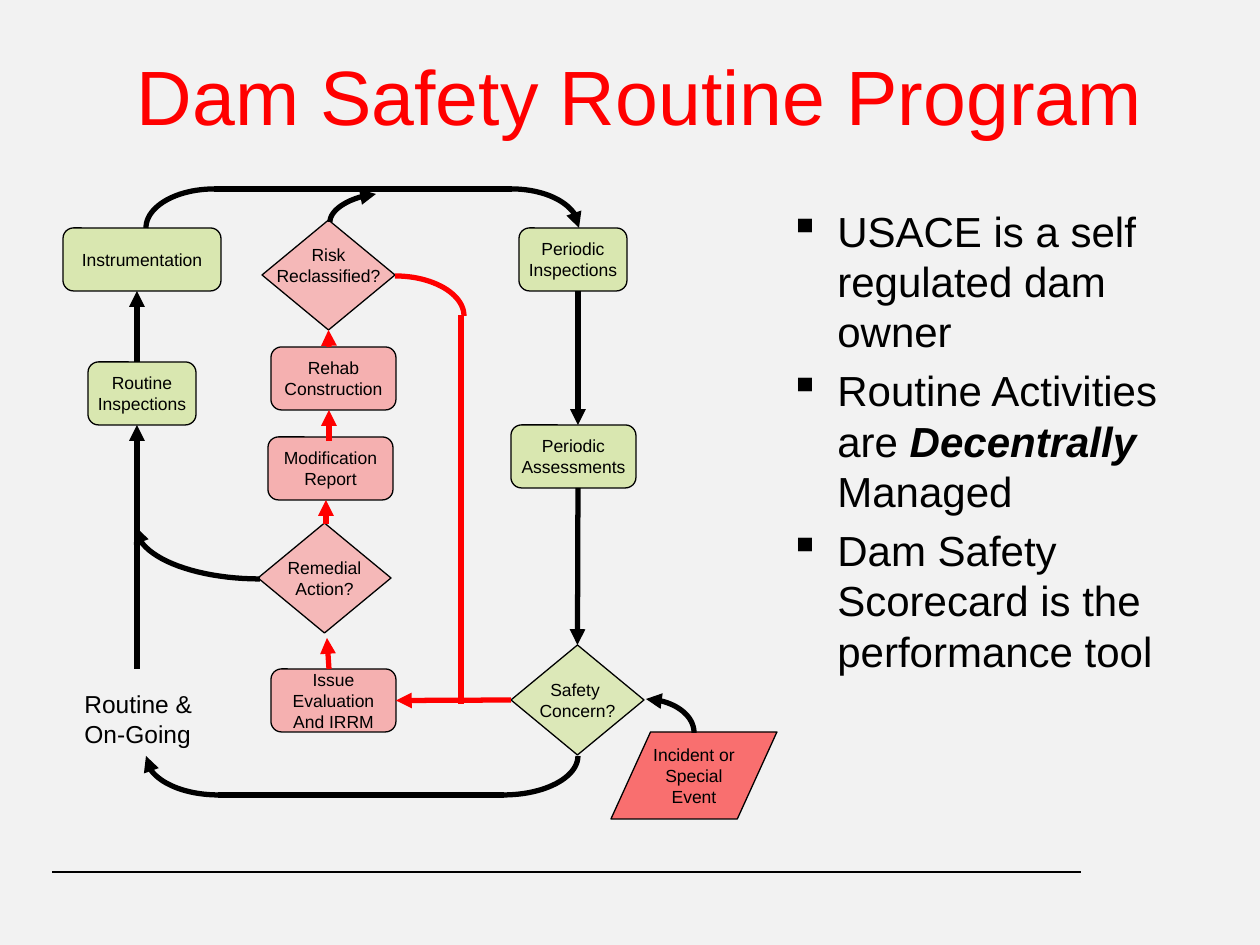
from lxml import etree
from pptx import Presentation
from pptx.dml.color import RGBColor
from pptx.enum.shapes import MSO_CONNECTOR, MSO_SHAPE as SHAPE
from pptx.enum.text import MSO_ANCHOR as ANCHOR, PP_ALIGN as ALIGN
from pptx.oxml.ns import qn
from pptx.util import Emu, Pt

FONT = "Arial"
BLACK, RED, GREEN = "000000", "FF0000", "99CC00"
TOP, LEFT, BOTTOM, RIGHT = range(4)
LINE_HEIGHT = 20
ROUND, DIAMOND, SLANTED = SHAPE.ROUNDED_RECTANGLE, SHAPE.FLOWCHART_DECISION, SHAPE.PARALLELOGRAM

# name: (outline, colour, opacity %, left, top, width, height, lines)
STEPS = {
    "routine": (ROUND, GREEN, 27, 88, 362, 108, 63, ["Routine", "Inspections"]),
    "instrumentation": (ROUND, GREEN, 27, 63, 228, 158, 63, ["Instrumentation"]),
    "periodic": (ROUND, GREEN, 27, 519, 228, 108, 63, ["Periodic", "Inspections"]),
    "assessments": (ROUND, GREEN, 27, 511, 425, 125, 63, ["Periodic", "Assessments"]),
    "safety": (DIAMOND, GREEN, 24, 511, 645, 133, 110, ["Safety ", "Concern?"]),
    "issue": (ROUND, RED, 27, 271, 669, 125, 63, ["Issue", "Evaluation", "And IRRM"]),
    "remedial": (DIAMOND, RED, 24, 258, 523, 133, 110, ["Remedial", "Action?"]),
    "incident": (SLANTED, RED, 54, 611, 732, 166, 87, ["Incident or", "Special", "Event"]),
    "rehab": (ROUND, RED, 27, 271, 347, 125, 63, ["Rehab", "Construction"]),
    "modification": (ROUND, RED, 27, 268, 437, 125, 63, ["Modification", "Report"]),
    "risk": (DIAMOND, RED, 24, 262, 220, 133, 110, ["Risk", "Reclassified?"]),
}

# start, end, colour, arrow at the end
STRAIGHTS = [
    ((214, 189), (512, 189), BLACK, False),
    ((504, 795), (218, 795), BLACK, False),
    ((137, 362), (137, 291), BLACK, True),
    ((137, 669), (137, 425), BLACK, True),
    ((578, 291), (578, 425), BLACK, True),
    ((329, 669), (327, 638), RED, True),
    ((326, 524), (326, 500), RED, True),
    ((329, 441), (329, 410), RED, True),
    ((461, 315), (461, 704), RED, False),
]

# start, corner the bend leans towards, end, colour, arrow at the end
BENDS = [
    ((146, 228), (146, 189), (214, 189), BLACK, False),
    ((512, 189), (579, 189), (579, 228), BLACK, True),
    ((578, 756), (578, 795), (504, 795), BLACK, False),
    ((218, 795), (146, 795), (146, 756), BLACK, True),
    ((260, 579), (136, 579), (136, 527), BLACK, True),
    ((694, 733), (695, 700), (646, 699), BLACK, True),
    ((395, 276), (464, 276), (464, 316), RED, False),
    ((330, 222), (330, 199), (376, 194), BLACK, True),
]

BULLETS = [
    [("USACE is a self regulated dam owner", False)],
    [("Routine Activities are ", False), ("Decentrally ", True), ("Managed", False)],
    [("Dam Safety Scorecard is the performance tool", False)],
]


def px(*lengths):
    """Turn lengths at 126 px to the inch into EMU."""
    return [Emu(round(length * 914400 / 126)) for length in lengths]


def rgb(code):
    return RGBColor.from_string(code)


def style_font(paragraph, size, color=BLACK):
    paragraph.font.name = FONT
    paragraph.font.size = Pt(size)
    paragraph.font.color.rgb = rgb(color)


def write_lines(frame, lines, size, color=BLACK, align=ALIGN.CENTER):
    for index, line in enumerate(lines):
        paragraph = frame.add_paragraph() if index else frame.paragraphs[0]
        paragraph.text = line
        paragraph.alignment = align
        style_font(paragraph, size, color)


def add_text(slide, box, lines, size, color=BLACK, align=ALIGN.LEFT,
             anchor=ANCHOR.TOP, wrap=True):
    frame = slide.shapes.add_textbox(*px(*box)).text_frame
    frame.word_wrap = wrap
    frame.vertical_anchor = anchor
    write_lines(frame, lines, size, color, align)


def add_bullets(slide, box):
    frame = slide.shapes.add_textbox(*px(*box)).text_frame
    frame.word_wrap = True
    indent = px(48)[0]
    for index, pieces in enumerate(BULLETS):
        paragraph = frame.add_paragraph() if index else frame.paragraphs[0]
        if index:
            paragraph.space_before = Pt(4.8)
        properties = paragraph._p.get_or_add_pPr()
        properties.set("marL", str(indent))
        properties.set("indent", str(-indent))
        etree.SubElement(properties, qn("a:buChar")).set("char", "▪")
        style_font(paragraph, 24)
        for words, stressed in pieces:
            run = paragraph.add_run()
            run.text = words
            if stressed:
                run.font.bold = run.font.italic = True


def add_step(slide, outline, color, opacity, left, top, width, height, lines):
    step = slide.shapes.add_shape(outline, *px(left, top, width, height))
    step.shadow.inherit = False
    if outline == SLANTED:
        step.adjustments[0] = 0.455
    step.fill.solid()
    step.fill.fore_color.rgb = rgb(color)
    tint = step.fill._xPr.find(qn("a:solidFill"))[0]
    etree.SubElement(tint, qn("a:alpha")).set("val", str(opacity * 1000))
    step.line.color.rgb = rgb(BLACK)
    step.line.width = Pt(0.75)
    frame = step.text_frame
    frame.word_wrap = False
    frame.vertical_anchor = ANCHOR.MIDDLE
    write_lines(frame, lines, 10)
    return step


def style_stroke(line, color, arrow, width=3):
    line.color.rgb = rgb(color)
    line.width = Pt(width)
    if arrow:
        etree.SubElement(line._get_or_add_ln(), qn("a:tailEnd")).set("type", "triangle")


def add_straight(slide, start, end, color, arrow, width=3):
    connector = slide.shapes.add_connector(MSO_CONNECTOR.STRAIGHT, *px(*start, *end))
    style_stroke(connector.line, color, arrow, width)
    etree.SubElement(connector._element.spPr, qn("a:effectLst"))
    return connector


def add_bend(slide, start, corner, end, color, arrow, steps=24):
    """Draw a quarter ellipse from start to end, tangent to both sides of the corner."""
    pull = 0.55
    points = []
    for step in range(steps + 1):
        t = step / steps
        points.append(px(*(
            (1 - t) ** 3 * a + 3 * (1 - t) ** 2 * t * (a + pull * (c - a))
            + 3 * (1 - t) * t ** 2 * (b + pull * (c - b)) + t ** 3 * b
            for a, c, b in zip(start, corner, end))))
    builder = slide.shapes.build_freeform(*points[0])
    builder.add_line_segments(points[1:], close=False)
    bend = builder.convert_to_shape()
    bend.shadow.inherit = False
    bend.fill.background()
    style_stroke(bend.line, color, arrow)


def main():
    prs = Presentation()
    prs.slide_width, prs.slide_height = px(1260, 945)
    slide = prs.slides.add_slide(prs.slide_layouts[6])
    slide.background.fill.solid()
    slide.background.fill.fore_color.rgb = rgb("F2F2F2")

    add_straight(slide, (1081, 872), (52, 872), BLACK, False, 0.75)
    add_bullets(slide, (777, 199, 406, 567))
    steps = {name: add_step(slide, *details) for name, details in STEPS.items()}
    steps["risk"].text_frame.margin_bottom += px(LINE_HEIGHT)[0]
    add_text(slide, (72, 683, 146, 72), ["Routine &", "On-Going"], 14, wrap=False)

    for straight in STRAIGHTS:
        add_straight(slide, *straight)
    for bend in BENDS:
        add_bend(slide, *bend)
    to_safety = add_straight(slide, (578, 488), (578, 645), BLACK, True)
    to_safety.end_connect(steps["safety"], TOP)
    to_issue = add_straight(slide, (511, 700), (396, 700), RED, True)
    to_issue.begin_connect(steps["safety"], LEFT)
    to_issue.end_connect(steps["issue"], RIGHT)
    to_risk = add_straight(slide, (329, 347), (329, 330), RED, True)
    to_risk.end_connect(steps["risk"], BOTTOM)

    add_text(slide, (73, 42, 1134, 105), ["Dam Safety Routine Program"], 44, RED,
             ALIGN.CENTER, ANCHOR.MIDDLE)
    prs.save("out.pptx")


if __name__ == "__main__":
    main()
